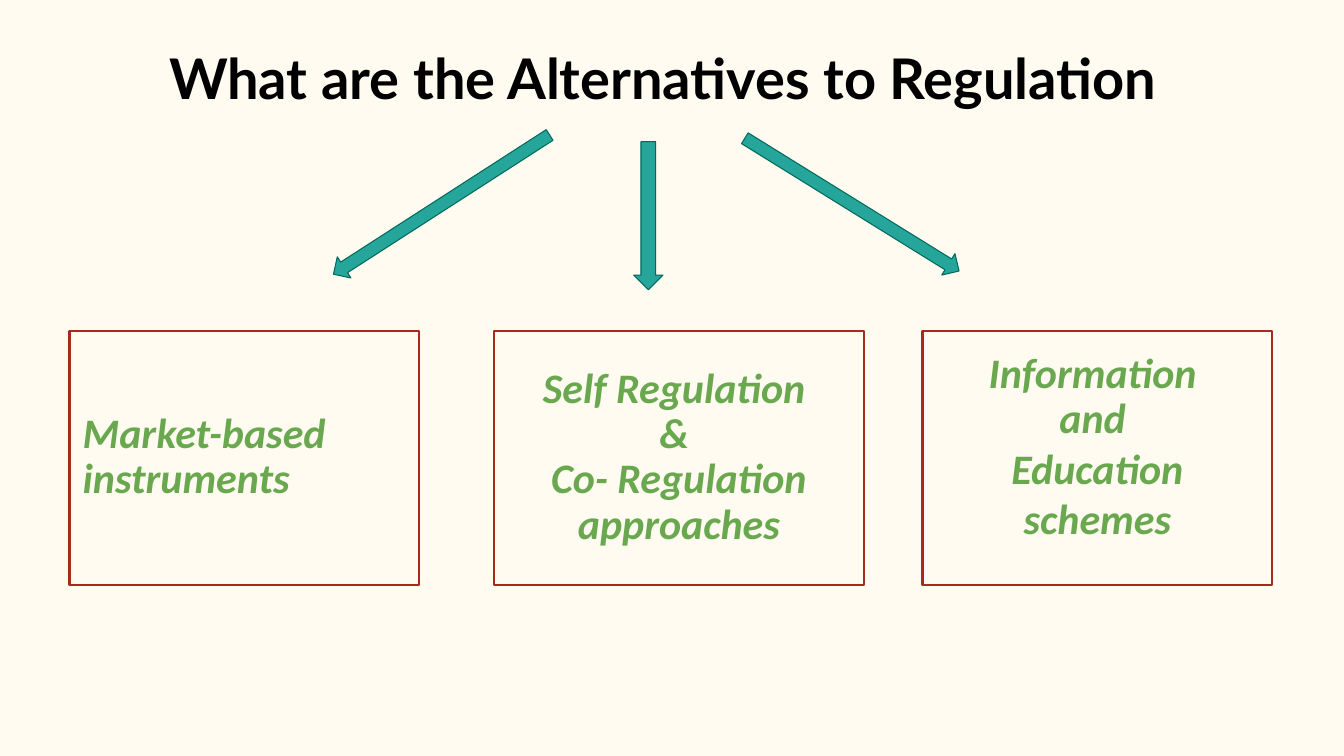
import pptx
import pptx.util
import pptx.dml.color
import pptx.enum.shapes
import pptx.enum.text

Inches, Pt = pptx.util.Inches, pptx.util.Pt
SHAPE = pptx.enum.shapes.MSO_SHAPE
ALIGN = pptx.enum.text.PP_ALIGN
MIDDLE = pptx.enum.text.MSO_ANCHOR.MIDDLE

WIDE, HIGH = 13.33, 7.5
COLORS = {"back": "FFFBF0", "title": "000000", "text": "6AA84F",
          "frame": "A72A1E", "arrow": "26A69A", "edge": "00695C"}

TITLE = "What are the Alternatives to Regulation"
TOP, TALL, PAD = 3.28, 2.52, 0.13
# left, width, bottom inset, alignment, (line, spacing) pairs
BOXES = [
    (0.69, 3.47, PAD, ALIGN.LEFT, [("Market-based instruments", 0.9)]),
    (4.9, 3.67, PAD, ALIGN.CENTER,
     [("Self Regulation ", 0.9), ("& ", 0.9),
      ("Co- Regulation approaches", 0.9)]),
    (9.15, 3.47, PAD + 0.2, ALIGN.CENTER,
     [("Information ", 0.9), ("and ", 0.9), ("Education schemes", 1.0)]),
]
# centre x, centre y, width, length, turn in degrees
ARROWS = [(4.38, 2.03, 0.25, 2.55, 57.2),
          (6.43, 2.14, 0.29, 1.47, 0),
          (8.45, 2.03, 0.25, 2.5, 301.8)]


def color(name):
    return pptx.dml.color.RGBColor.from_string(COLORS[name])


def add_line(para, text, spacing, align, font, size, tint, italic):
    para.alignment, para.line_spacing = align, spacing
    para.space_before = para.space_after = Pt(0)
    run = para.add_run()
    run.text = text
    face = run.font
    face.name, face.size = font, Pt(size)
    face.bold, face.italic = True, italic
    face.color.rgb = color(tint)


def set_frame(frame, side, top, bottom):
    frame.word_wrap = True
    frame.auto_size = pptx.enum.text.MSO_AUTO_SIZE.NONE
    frame.vertical_anchor = MIDDLE
    frame.margin_left = frame.margin_right = Inches(side)
    frame.margin_top, frame.margin_bottom = Inches(top), Inches(bottom)


def add_shape(slide, kind, place, edge, weight, fill=None):
    shape = slide.shapes.add_shape(kind, *map(Inches, place))
    shape.shadow.inherit = False
    if fill:
        shape.fill.solid()
        shape.fill.fore_color.rgb = color(fill)
    else:
        shape.fill.background()
    shape.line.color.rgb = color(edge)
    shape.line.width = Pt(weight)
    return shape


def main():
    deck = pptx.Presentation()
    deck.slide_width, deck.slide_height = Inches(WIDE), Inches(HIGH)
    slide = deck.slides.add_slide(deck.slide_layouts.get_by_name("Title Only"))
    slide.background.fill.solid()
    slide.background.fill.fore_color.rgb = color("back")

    title = slide.shapes.title
    title.left, title.top = Inches(0.92), Inches(0.4)
    title.width, title.height = Inches(11.31), Inches(0.82)
    set_frame(title.text_frame, 0.1, 0.05, 0.05)
    add_line(title.text_frame.paragraphs[0], TITLE, 0.9, ALIGN.CENTER,
             "Lato", 40, "title", False)

    for left, width, bottom, align, lines in BOXES:
        box = add_shape(slide, SHAPE.RECTANGLE, (left, TOP, width, TALL),
                        "frame", 1.5)
        frame = box.text_frame
        set_frame(frame, PAD, PAD, bottom)
        for i, (text, spacing) in enumerate(lines):
            para = frame.add_paragraph() if i else frame.paragraphs[0]
            add_line(para, text, spacing, align, "Calibri", 30, "text", True)

    for x, y, width, length, turn in ARROWS:
        place = (x - width / 2, y - length / 2, width, length)
        arrow = add_shape(slide, SHAPE.DOWN_ARROW, place, "edge", 0.75, "arrow")
        arrow.rotation = turn

    deck.save("out.pptx")


if __name__ == "__main__":
    main()
